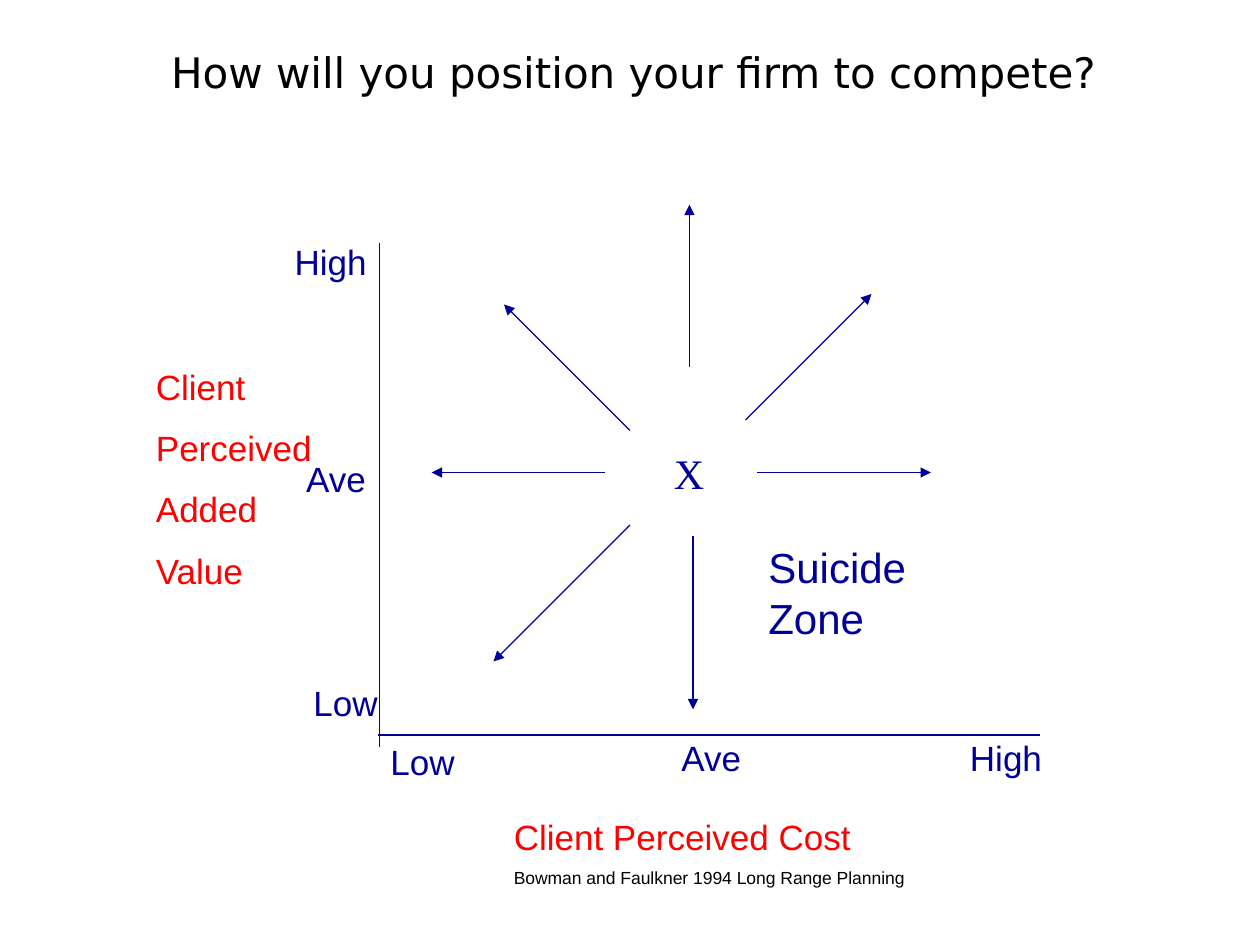
from lxml.etree import SubElement
from pptx import Presentation
from pptx.dml.color import RGBColor
from pptx.enum.shapes import MSO_CONNECTOR
from pptx.enum.text import MSO_ANCHOR, MSO_AUTO_SIZE
from pptx.oxml.ns import qn
from pptx.util import Pt

COLORS = {"ink": "000000", "navy": "000099", "red": "FF0000"}


class PositioningSlide:
    frame_format = {"word_wrap": True, "auto_size": MSO_AUTO_SIZE.NONE}
    line_width = 0.75
    paragraph_gap = 0.55  # share of the text size

    def __init__(self, slide):
        self.slide = slide

    def text(self, box, lines, size=20, color="navy", font="Arial", **frame_options):
        """Write lines in a box; a line is a string or (string, size, color)."""
        frame = self.slide.shapes.add_textbox(*map(Pt, box)).text_frame
        for name, value in {**self.frame_format, **frame_options}.items():
            setattr(frame, name, value)
        for index, line in enumerate(lines):
            wording, points, hue = (line, size, color) if isinstance(line, str) else line
            paragraph = frame.paragraphs[0]
            if index:
                paragraph = frame.add_paragraph()
                paragraph.space_before = Pt(points * self.paragraph_gap)
            run = paragraph.add_run()
            run.text = wording
            for name, value in {"name": font, "size": Pt(points)}.items():
                setattr(run.font, name, value)
            run.font.color.rgb = RGBColor.from_string(COLORS[hue])

    def line(self, start, end, arrow=False):
        connector = self.slide.shapes.add_connector(
            MSO_CONNECTOR.STRAIGHT, *map(Pt, start + end))
        connector.line.width = Pt(self.line_width)
        connector.line.color.rgb = RGBColor.from_string(COLORS["navy"])
        if arrow:
            SubElement(connector.line._get_or_add_ln(), qn("a:tailEnd"), type="triangle")
        SubElement(connector._element.spPr, qn("a:effectLst"))


def main():
    deck = Presentation()
    deck.slide_width, deck.slide_height = Pt(720), Pt(540)
    page = PositioningSlide(deck.slides.add_slide(deck.slide_layouts[6]))

    page.text((90.7, 16.6, 613.4, 49), ["How will you position your firm to compete?"],
              size=24, color="ink", font="DejaVu Sans", vertical_anchor=MSO_ANCHOR.MIDDLE)

    value_axis = ((216.7, 139), (216.7, 427))
    cost_axis = ((216, 420), (594, 420))
    for axis in (value_axis, cost_axis):
        page.line(*axis)

    page.text((82, 205.2, 264, 139), ["Client", "Perceived", "Added", "Value"], color="red")
    page.text((286.5, 462.2, 255.6, 49),
              ["Client Perceived Cost",
               ("Bowman and Faulkner 1994 Long Range Planning", 10, "ink")], color="red")

    scale_labels = [
        ("High", 161.3, 134), ("Ave", 167.8, 257.8), ("Low", 172, 386),
        ("Low", 216, 419.8), ("Ave", 382.3, 417.3), ("High", 547.2, 417.3),
    ]
    for label, left, top in scale_labels:
        page.text((left, top, 72, 31), [label])

    strategy_moves = [
        ((396, 306), (396, 405.3)),
        ((432.7, 270), (532, 270)),
        ((394, 210), (394, 117)),
        ((345.7, 270), (246.7, 270)),
        ((360, 300), (282, 378)),
        ((360, 246), (288, 174)),
        ((426, 240), (498, 168)),
    ]
    for start, end in strategy_moves:
        page.line(start, end, arrow=True)

    page.text((378, 252, 30, 36), ["X"], size=24, font="Times New Roman")
    page.text((432, 306, 102, 65), ["Suicide Zone"], size=24)

    deck.save("out.pptx")


if __name__ == "__main__":
    main()
